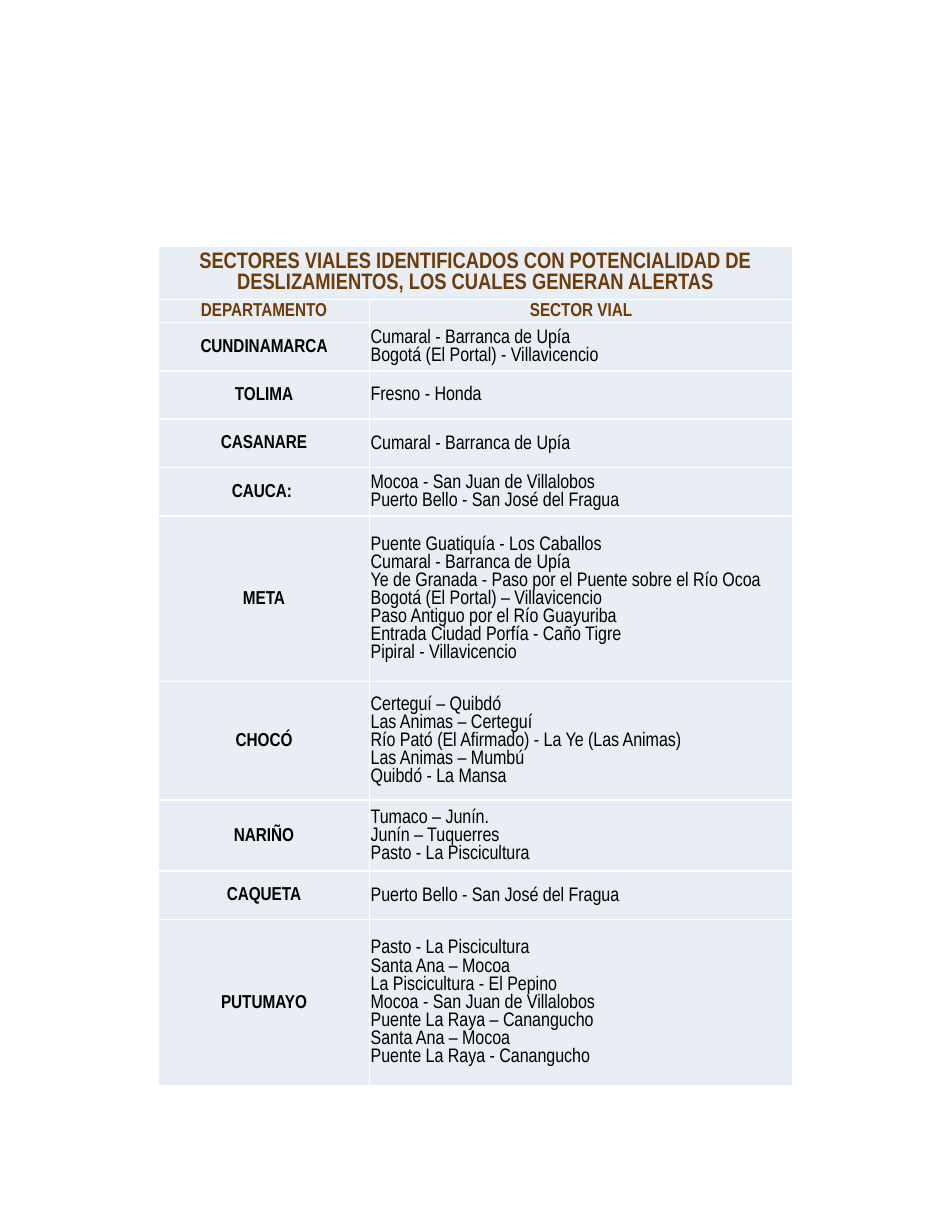
"""Builds a slide with the table of road sectors prone to landslides."""
from pptx import Presentation
from pptx import util as u
from pptx.dml.color import RGBColor
from pptx.enum import text

BROWN = RGBColor(0x6E, 0x3C, 0x0A)
BLACK = RGBColor(0x00, 0x00, 0x00)
PALE_BLUE = RGBColor(0xE9, 0xED, 0xF4)
FONT = "Arial Narrow"

SLIDE_WIDTH, SLIDE_HEIGHT = u.Cm(18), u.Cm(23.29)
TABLE_LEFT, TABLE_TOP = u.Inches(1.18), u.Inches(1.83)
DEPARTMENT_WIDTH, SECTOR_WIDTH = u.Inches(1.57), u.Inches(3.15)
TITLE_HEIGHT, HEADING_HEIGHT = u.Inches(0.4), u.Inches(0.17)
LINE_HEIGHT, MIN_HEIGHT = u.Pt(12.7), u.Inches(0.36)

TITLE = ("SECTORES VIALES IDENTIFICADOS CON POTENCIALIDAD DE "
         "DESLIZAMIENTOS, LOS CUALES GENERAN ALERTAS")
HEADINGS = ("DEPARTAMENTO", "SECTOR VIAL")
SECTORS = {
    "CUNDINAMARCA": ["Cumaral - Barranca de Upía",
                     "Bogotá (El Portal) - Villavicencio"],
    "TOLIMA": ["Fresno - Honda"],
    "CASANARE": ["Cumaral - Barranca de Upía"],
    "CAUCA: ": ["Mocoa - San Juan de Villalobos",
                "Puerto Bello - San José del Fragua"],
    "META": ["Puente Guatiquía - Los Caballos",
             "Cumaral - Barranca de Upía",
             "Ye de Granada - Paso por el Puente sobre el Río Ocoa",
             "Bogotá (El Portal) – Villavicencio",
             "Paso Antiguo por el Río Guayuriba",
             "Entrada Ciudad Porfía - Caño Tigre",
             "Pipiral - Villavicencio"],
    "CHOCÓ": ["Certeguí – Quibdó",
              "Las Animas – Certeguí",
              "Río Pató (El Afirmado) - La Ye (Las Animas)",
              "Las Animas – Mumbú",
              "Quibdó - La Mansa"],
    "NARIÑO": ["Tumaco – Junín.",
               "Junín – Tuquerres",
               "Pasto - La Piscicultura"],
    "CAQUETA": ["Puerto Bello - San José del Fragua"],
    "PUTUMAYO": ["Pasto - La Piscicultura",
                 "Santa Ana – Mocoa",
                 "La Piscicultura - El Pepino",
                 "Mocoa - San Juan de Villalobos",
                 "Puente La Raya – Canangucho",
                 "Santa Ana – Mocoa",
                 "Puente La Raya - Canangucho"],
}


def fill_cell(cell, wording, size, color=BLACK, bold=True,
              align=text.PP_ALIGN.CENTER):
    cell.fill.solid()
    cell.fill.fore_color.rgb = PALE_BLUE
    cell.vertical_anchor = text.MSO_ANCHOR.MIDDLE
    cell.margin_left = cell.margin_right = cell.margin_top = u.Inches(0.01)
    cell.margin_bottom = 0
    cell.text_frame.text = wording
    for paragraph in cell.text_frame.paragraphs:
        paragraph.alignment = align
        for run in paragraph.runs:
            run.font.name = FONT
            run.font.size = u.Pt(size)
            run.font.bold = bold
            run.font.color.rgb = color


def add_sector_table(slide):
    heights = [TITLE_HEIGHT, HEADING_HEIGHT]
    heights += [max(MIN_HEIGHT, LINE_HEIGHT * len(roads))
                for roads in SECTORS.values()]
    table = slide.shapes.add_table(
        len(heights), 2, TABLE_LEFT, TABLE_TOP,
        DEPARTMENT_WIDTH + SECTOR_WIDTH, sum(heights)).table
    table.first_row = table.horz_banding = False
    table.columns[0].width = DEPARTMENT_WIDTH
    table.columns[1].width = SECTOR_WIDTH
    for row, height in zip(table.rows, heights):
        row.height = height
    return table


def fill_headings(table):
    title_cell = table.cell(0, 0)
    title_cell.merge(table.cell(0, 1))
    fill_cell(title_cell, TITLE, 12, BROWN)
    for column, heading in enumerate(HEADINGS):
        fill_cell(table.cell(1, column), heading, 10, BROWN)


def fill_sectors(table):
    for row, (department, roads) in enumerate(SECTORS.items(), start=2):
        fill_cell(table.cell(row, 0), department, 10)
        fill_cell(table.cell(row, 1), "\n".join(roads), 10.5,
                  bold=False, align=text.PP_ALIGN.LEFT)


def main():
    deck = Presentation()
    deck.slide_width = SLIDE_WIDTH
    deck.slide_height = SLIDE_HEIGHT
    slide = deck.slides.add_slide(deck.slide_layouts[6])
    table = add_sector_table(slide)
    fill_headings(table)
    fill_sectors(table)
    deck.save("out.pptx")


if __name__ == "__main__":
    main()
